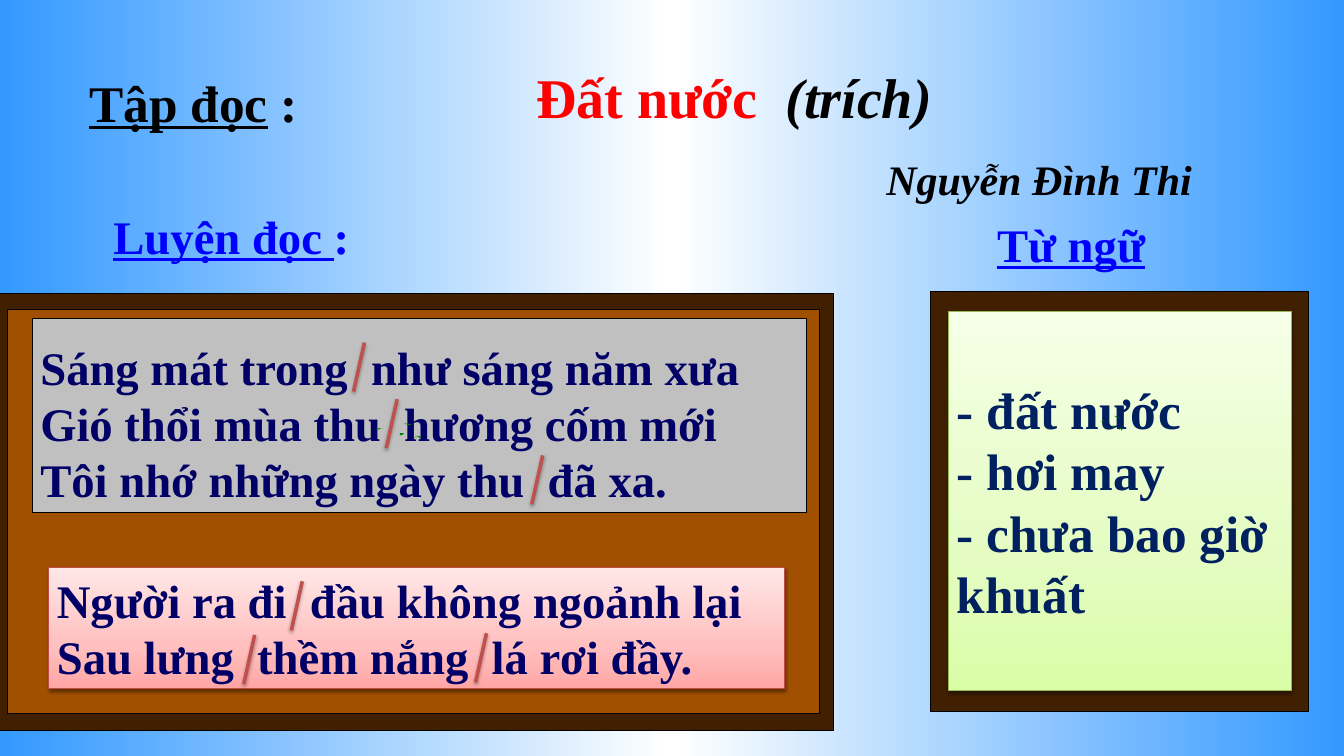
from lxml import etree
from pptx import Presentation
from pptx import util as u
from pptx.dml.color import RGBColor
from pptx.enum import shapes, text
from pptx.oxml.ns import qn

FONT = "Times New Roman"
FRAME, BLUE, NAVY, GREEN = "402000", "0000FF", "000066", "008000"
WIDE_INSETS = (0.36, 0.18)
INSETS = (0.25, 0.13)

# Outlines of the leaf specks, in cm from the top left of their cluster
SPECKS = [
    [(0.25, 0.15), (0.18, 0.15), (0.08, 0.2), (0, 0.18), (0.13, 0.15)],
    [(0.81, 0.3), (0.86, 0.3), (0.81, 0.36), (0.74, 0.36), (0.74, 0.3)],
    [(1.4, 0.41), (1.32, 0.38), (1.19, 0.38), (1.32, 0.41), (1.32, 0.46)],
    [(1.27, 0.43), (1.19, 0.41), (1.19, 0.43)],
    [(1.19, 0.05), (1.07, 0.05), (1.07, 0.03), (0.86, 0), (0.94, 0.03), (1.02, 0.05)],
]
# Upper ends of the reading pauses, in cm from the top left of the board
PAUSES = [(11.02, 1.47), (12.01, 3.18), (16.41, 4.88),
          (9.14, 8.69), (7.7, 10.31), (14.71, 10.26)]


def color(hex_string):
    return RGBColor.from_string(hex_string)


def cm(*lengths):
    return [u.Cm(length) for length in lengths]


def set_gradient(fill, owner, stops, angle):
    """Fill with (percent, colour) stops; the angle runs clockwise."""
    fill.gradient()
    gradient = owner.find(".//" + qn("a:gradFill"))
    stop_list = gradient.find(qn("a:gsLst"))
    for old in list(stop_list):
        stop_list.remove(old)
    for percent, shade in stops:
        stop = etree.SubElement(stop_list, qn("a:gs"), pos=str(percent * 1000))
        etree.SubElement(stop, qn("a:srgbClr"), val=shade)
    gradient.find(qn("a:lin")).set("ang", str(angle * 60000))


def set_shadow(shape, percent):
    """Give the shape a soft black shadow straight below it."""
    properties = shape.element.spPr
    effects = properties.find(qn("a:effectLst"))
    if effects is None:
        effects = etree.SubElement(properties, qn("a:effectLst"))
    shadow = etree.SubElement(effects, qn("a:outerShdw"), blurRad=str(u.Pt(3.1)),
                              dist=str(u.Pt(1.6)), dir="5400000", rotWithShape="0")
    black = etree.SubElement(shadow, qn("a:srgbClr"), val="000000")
    etree.SubElement(black, qn("a:alpha"), val=str(percent * 1000))


def write(shape, paragraphs, size, insets=INSETS, anchor=text.MSO_ANCHOR.MIDDLE):
    """Write paragraphs, each a list of (words, colour, styles) runs."""
    frame = shape.text_frame
    frame.auto_size = text.MSO_AUTO_SIZE.NONE
    frame.word_wrap = True
    frame.vertical_anchor = anchor
    frame.margin_left = frame.margin_right = u.Cm(insets[0])
    frame.margin_top = frame.margin_bottom = u.Cm(insets[1])
    for number, runs in enumerate(paragraphs):
        paragraph = frame.add_paragraph() if number else frame.paragraphs[0]
        paragraph.alignment = text.PP_ALIGN.LEFT
        paragraph.space_before = u.Pt(0)
        for words, shade, styles in runs:
            run = paragraph.add_run()
            run.text = words
            run.font.name, run.font.size = FONT, u.Pt(size)
            run.font.color.rgb = color(shade)
            run.font.bold = True
            run.font.italic = "i" in styles
            run.font.underline = "u" in styles
    return frame


def label(slide, box, runs, size):
    write(slide.shapes.add_textbox(*cm(*box)), [runs], size,
          WIDE_INSETS, text.MSO_ANCHOR.TOP)


def panel(slide, box, shade=None):
    rectangle = slide.shapes.add_shape(shapes.MSO_SHAPE.RECTANGLE, *cm(*box))
    rectangle.shadow.inherit = False
    if shade:
        rectangle.fill.solid()
        rectangle.fill.fore_color.rgb = color(shade)
    rectangle.line.color.rgb = color("000000")
    rectangle.line.width = u.Pt(0.88)
    return rectangle


def make_glossy(shape, stops, border):
    set_gradient(shape.fill, shape.element, stops, 270)
    shape.line.color.rgb = color(border)
    shape.line.width = u.Pt(0.75)
    shape.shadow.inherit = False
    set_shadow(shape, 38)


def leaf_specks(slide, left, top, stretch=1):
    for outline in SPECKS:
        points = [(u.Cm(left + x * stretch), u.Cm(top + y)) for x, y in outline]
        builder = slide.shapes.build_freeform(*points[0], scale=1.0)
        builder.add_line_segments(points[1:], close=True)
        speck = builder.convert_to_shape()
        speck.shadow.inherit = False
        speck.fill.solid()
        speck.fill.fore_color.rgb = color(GREEN)
        speck.line.fill.background()


def pause_mark(slide, x, y):
    mark = slide.shapes.add_connector(shapes.MSO_CONNECTOR.STRAIGHT,
                                      *cm(x, y, x - 0.33, y + 1.48))
    mark.line.color.rgb = color("C0504D")
    mark.line.width = u.Pt(3)
    set_shadow(mark, 35)


def reading_board(slide, left, top, width, height):
    panel(slide, (left, top, width, height), FRAME)
    panel(slide, (left + 0.23, top + 0.48, width - 0.64, height - 0.99), "A05000")
    stanza = panel(slide, (left + 0.97, top + 0.74, 23.42, 5.87), "C0C0C0")
    lines = ["Sáng mát trong  như sáng năm xưa",
             "Gió thổi mùa thu  hương cốm mới",
             "Tôi nhớ những ngày thu  đã xa."]
    frame = write(stanza, [[(line, NAVY, "")] for line in lines], 40)
    frame.margin_top = u.Cm(0.55)
    leaf_specks(slide, left + 11.35, top + 3.91)

    couplet = panel(slide, (left + 1.47, top + 8.26, 22.25, 3.68))
    make_glossy(couplet, [(0, "FFA6A5"), (35, "FFC0BF"), (100, "FFE7E7")], "BF4C48")
    lines = ["Người ra đi  đầu không ngoảnh lại",
             "Sau lưng  thềm nắng  lá rơi đầy."]
    write(couplet, [[(line, NAVY, "")] for line in lines], 40)
    for x, y in PAUSES:
        pause_mark(slide, left + x, top + y)


def word_board(slide, left, top, width, height):
    panel(slide, (left, top, width, height), FRAME)
    words = slide.placeholders[1]
    slide.shapes.element.append(words.element)  # bring in front of the frame
    words.left, words.top, words.width, words.height = cm(
        left + 0.54, top + 0.61, width - 1.07, height - 1.24)
    make_glossy(words, [(0, "DAFDA7"), (35, "E4FCC2"), (100, "F5FFE7")], "98B955")
    terms = ["- đất nước", "- hơi may", "- chưa bao giờ khuất"]
    frame = write(words, [[(term, "002060", "")] for term in terms], 44)
    for paragraph in frame.paragraphs:
        properties = paragraph._p.get_or_add_pPr()
        properties.set("marL", "0")
        properties.set("indent", "0")
        etree.SubElement(properties, qn("a:buNone"))
    leaf_specks(slide, left + 5.16, top + 3.76, 0.455)


def poem_heading(slide, left, top, width, height):
    title = slide.shapes.title
    title.left, title.top, title.width, title.height = cm(left, top, width, height)
    frame = write(title, [[("Đất nước  ", "FF0000", ""), ("(trích)", "000000", "i")],
                          [("Nguyễn Đình Thi", "000000", "i")]],
                  48, WIDE_INSETS, text.MSO_ANCHOR.TOP)
    author = frame.paragraphs[1]
    author.runs[0].font.size = u.Pt(36)
    author.space_before = u.Pt(21)
    author._p.get_or_add_pPr().set("marL", str(u.Cm(10.59)))


def main():
    deck = Presentation()
    deck.slide_width, deck.slide_height = cm(40.64, 22.86)
    slide = deck.slides.add_slide(deck.slide_layouts[1])
    set_gradient(slide.background.fill, slide.element,
                 [(0, "3399FF"), (50, "FFFFFF"), (100, "3399FF")], 0)
    label(slide, (3.07, 6.1, 9.14, 1.52),
          [("Luyện đọc ", BLUE, "u"), (":", BLUE, "")], 40)
    reading_board(slide, 0, 8.89, 25.2, 13.21)
    label(slide, (29.79, 6.35, 5.97, 1.52), [("Từ ngữ", BLUE, "u")], 40)
    word_board(slide, 28.14, 8.81, 11.43, 12.7)
    poem_heading(slide, 15.85, 1.7, 21.41, 4.88)
    label(slide, (2.34, 1.96, 8, 2.24),
          [("Tập đọc", "000000", "u"), (" :", "000000", "")], 44)
    deck.save("out.pptx")


if __name__ == "__main__":
    main()
